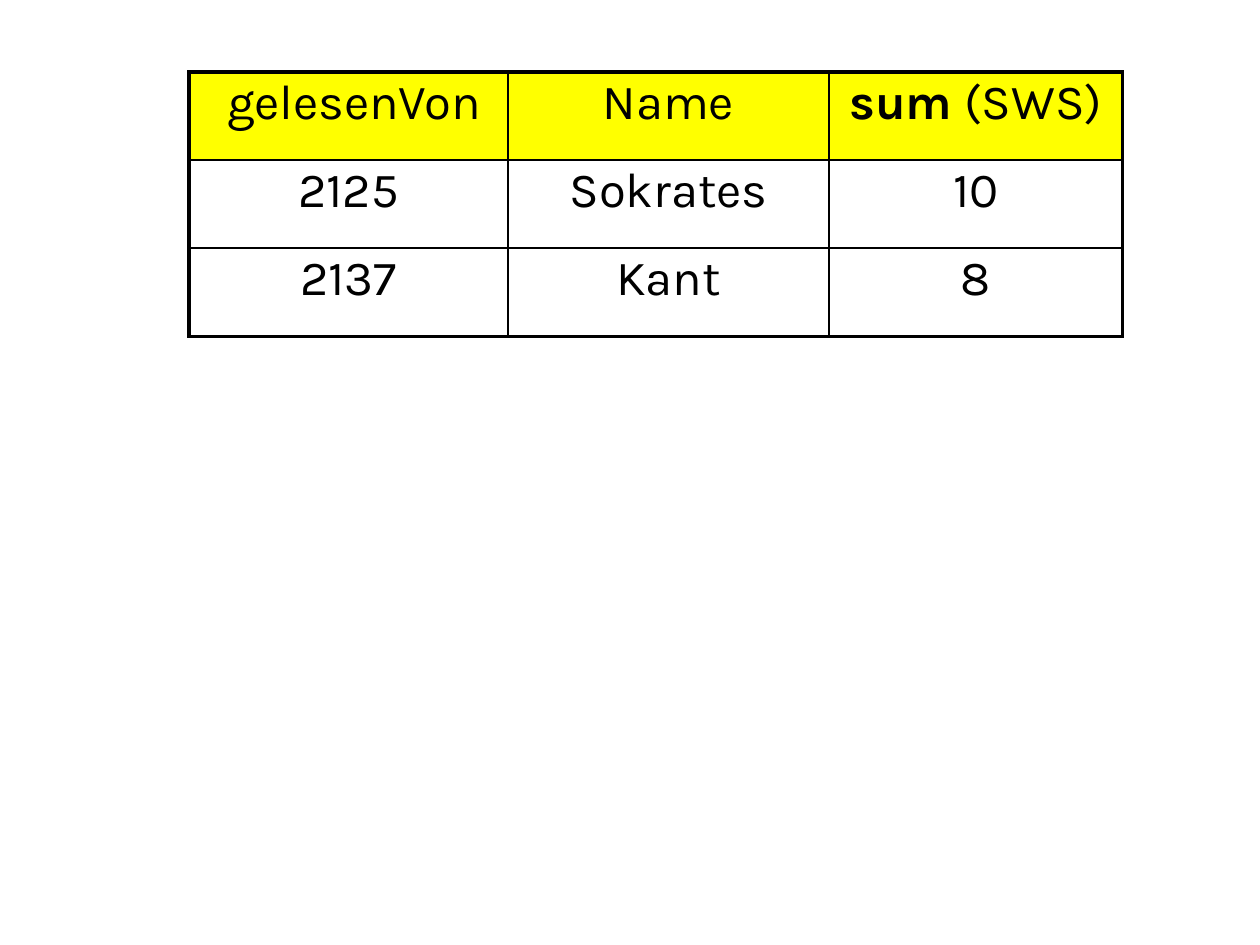
from dataclasses import dataclass

from lxml import etree
from pptx import Presentation
from pptx.dml.color import RGBColor
from pptx.enum.text import PP_ALIGN
from pptx.oxml.ns import qn
from pptx.slide import Slide
from pptx.util import Inches, Pt

CENTER = PP_ALIGN.CENTER
BLANK_LAYOUT = 6
COLORS = {"text": "000000", "border": "000000", "header": "FFFF00", "body": "FFFFFF"}

# A cell is a list of (text, bold) runs.
HEADER = [[(" gelesenVon", False)], [("Name", False)], [("sum ", True), ("(SWS)", False)]]
RECORDS = [("2125", "Sokrates", "10"), ("2137", "Kant", "8")]
COLUMN_WIDTHS = [2.53, 2.55, 2.33]
ROW_HEIGHT = 0.7


@dataclass
class Deck:
    slide: Slide
    font: str = "Karla"
    size: float = 28
    outer: float = 2.25
    inner: float = 1

    def table(self, left, top, widths, row_height, rows):
        """Add a table whose first row is the header, with a heavier outer frame."""
        n_rows, n_cols = len(rows), len(widths)
        frame = self.slide.shapes.add_table(
            n_rows, n_cols, Inches(left), Inches(top),
            Inches(sum(widths)), Inches(row_height * n_rows))
        table = frame.table
        for column, width in zip(table.columns, widths):
            column.width = Inches(width)
        for i, row in enumerate(rows):
            table.rows[i].height = Inches(row_height)
            for j, runs in enumerate(row):
                cell = table.cell(i, j)
                on_edge = {"lnL": j == 0, "lnR": j == n_cols - 1,
                           "lnT": i == 0, "lnB": i == n_rows - 1}
                self.borders(cell, on_edge)
                cell.fill.solid()
                fill = COLORS["header" if i == 0 else "body"]
                cell.fill.fore_color.rgb = RGBColor.from_string(fill)
                self.cell_text(cell, runs)

    def cell_text(self, cell, runs):
        cell.margin_left = cell.margin_right = 0
        cell.margin_top = cell.margin_bottom = Inches(0.05)
        p = cell.text_frame.paragraphs[0]
        p.alignment = CENTER
        p.line_spacing = 0.9
        p.space_before = Pt(0.2 * self.size)
        p.font.name = self.font
        p.font.size = Pt(self.size)
        p.font.color.rgb = RGBColor.from_string(COLORS["text"])
        for text, bold in runs:
            r = p.add_run()
            r.text = text
            r.font.bold = bold

    def borders(self, cell, on_edge):
        """Draw each side of a cell; must precede the fill in the cell's XML."""
        tc_pr = cell._tc.get_or_add_tcPr()
        for side, is_outer in on_edge.items():
            width = Pt(self.outer if is_outer else self.inner)
            ln = etree.SubElement(tc_pr, qn(f"a:{side}"), w=str(width))
            fill = etree.SubElement(ln, qn("a:solidFill"))
            etree.SubElement(fill, qn("a:srgbClr"), val=COLORS["border"])


def main():
    prs = Presentation()
    prs.slide_width, prs.slide_height = Inches(10), Inches(7.5)
    deck = Deck(prs.slides.add_slide(prs.slide_layouts[BLANK_LAYOUT]))
    body = [[[(value, False)] for value in record] for record in RECORDS]
    deck.table(1.5, 0.57, COLUMN_WIDTHS, ROW_HEIGHT, [HEADER] + body)
    prs.save("out.pptx")


if __name__ == "__main__":
    main()
